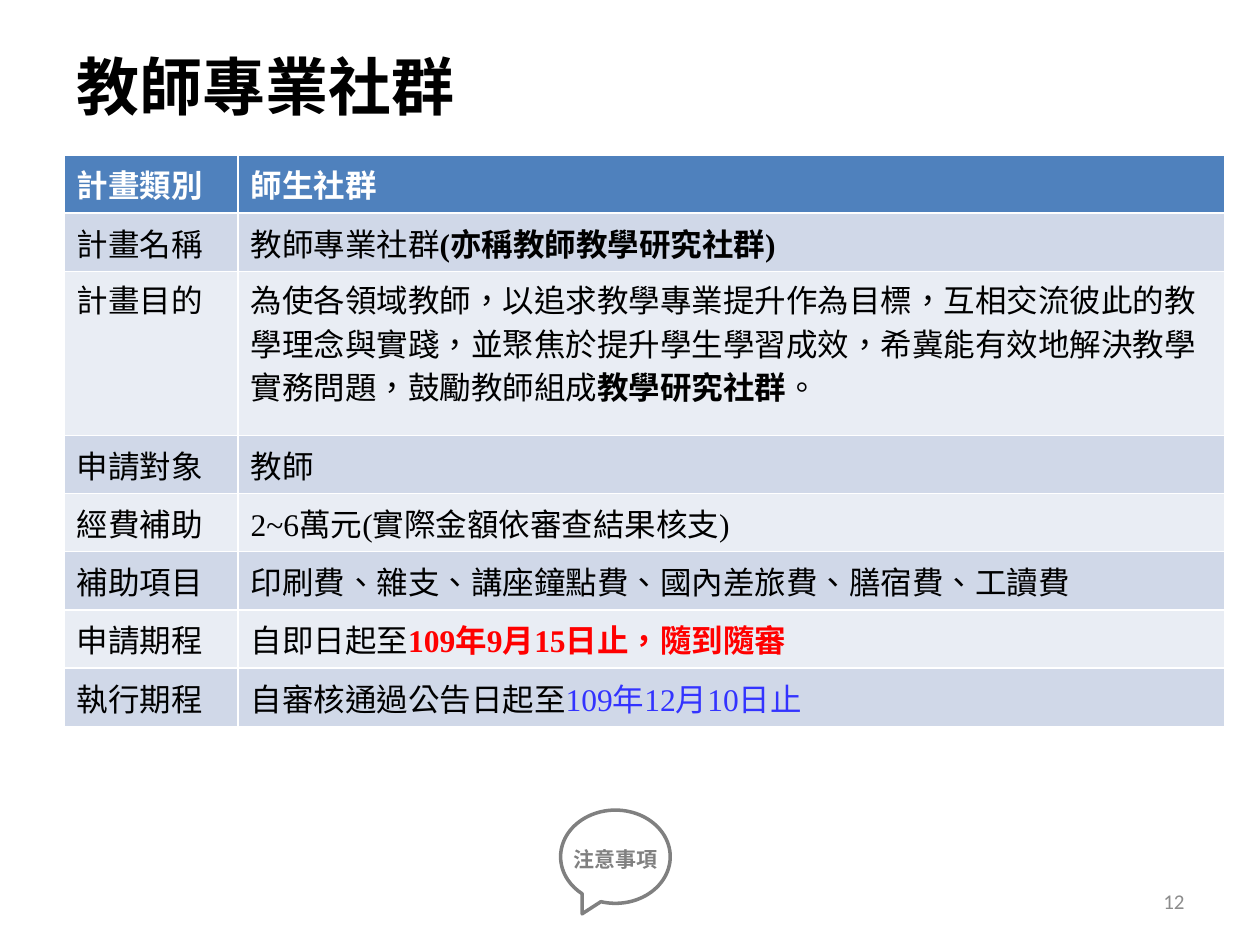
import pptx
import pptx.util
import pptx.dml.color
import pptx.enum.lang
import pptx.enum.shapes
import pptx.enum.text
import lxml.etree

Inches = pptx.util.Inches
Pt = pptx.util.Pt
Anchor = pptx.enum.text.MSO_ANCHOR
Align = pptx.enum.text.PP_ALIGN
SANS = "Noto Sans CJK SC"


def color(text):
    return pptx.dml.color.RGBColor.from_string(text)


def style(para, size, name, tint, bold=False):
    """Set the paragraph font, with the sans face for Chinese characters."""
    font = para.font
    font.size, font.name, font.bold = Pt(size), name, bold
    font.color.rgb = color(tint)
    font.language_id = pptx.enum.lang.MSO_LANGUAGE_ID.TRADITIONAL_CHINESE
    latin = para._p.pPr.find(".//" + pptx.oxml.ns.qn("a:latin"))
    east = lxml.etree.Element(pptx.oxml.ns.qn("a:ea"), typeface=SANS)
    latin.addnext(east)


deck = pptx.Presentation()
deck.slide_width, deck.slide_height = Inches(10), Inches(7.5)
slide = deck.slides.add_slide(deck.slide_layouts[6])
shapes = slide.shapes

# Each row: label, plain text, then marked text, its color and weight, and a tail
rows = [
    ("計畫類別", "師生社群"),
    ("計畫名稱", "教師專業社群", "(亦稱教師教學研究社群)", "000000", True),
    ("計畫目的", "為使各領域教師，以追求教學專業提升作為目標，互相交流彼此的教學理念與實踐，"
     "並聚焦於提升學生學習成效，希冀能有效地解決教學實務問題，鼓勵教師組成",
     "教學研究社群", "000000", True, "。"),
    ("申請對象", "教師"),
    ("經費補助", "2~6萬元(實際金額依審查結果核支)"),
    ("補助項目", "印刷費、雜支、講座鐘點費、國內差旅費、膳宿費、工讀費"),
    ("申請期程", "自即日起至", "109年9月15日止，隨到隨審", "FF0000", True),
    ("執行期程", "自審核通過公告日起至", "109年12月10日止", "3333FF", False),
]
AIM = 2
table = shapes.add_table(len(rows), 2, Inches(0.51), Inches(1.23),
                         Inches(9.21), Inches(4.18)).table
table.columns[0].width = Inches(1.38)
table.columns[1].width = Inches(7.83)

for i, (label, plain, *mark) in enumerate(rows):
    head = i == 0
    table.rows[i].height = Inches(1.3 if i == AIM else 0.41)
    fill = "4F81BD" if head else ("E9EDF4", "D0D8E8")[i % 2]
    for j, text in enumerate((label, plain)):
        cell = table.cell(i, j)
        cell.fill.solid()
        cell.fill.fore_color.rgb = color(fill)
        para = cell.text_frame.paragraphs[0]
        para.add_run().text = text
        if i == AIM:
            para.line_spacing = Pt(25)
        style(para, 18, "Times New Roman", "FFFFFF" if head else "000000", head)
    if mark:
        text, tint, bold, *tail = mark
        run = para.add_run()
        run.text = text
        run.font.bold = bold
        run.font.color.rgb = color(tint)
        for text in tail:
            para.add_run().text = text

bubble = shapes.add_shape(pptx.enum.shapes.MSO_SHAPE.OVAL_CALLOUT,
                          Inches(4.45), Inches(6.43), Inches(0.87), Inches(0.74))
bubble.adjustments[0], bubble.adjustments[1] = -0.304, 0.612
bubble.shadow.inherit = False
bubble.fill.background()
bubble.line.color.rgb = color("808080")
bubble.line.width = Pt(2)

# Text, place, font, wrap, anchor, alignment
boxes = [
    ("教師專業社群", (0.51, 0.29, 6.31, 0.77), (36, SANS, "000000", True),
     True, Anchor.MIDDLE, Align.LEFT),
    ("12", (7.17, 6.95, 2.33, 0.4), (12, "Calibri", "8C8C8C"),
     True, Anchor.MIDDLE, Align.RIGHT),
    ("注意事項", (4.45, 6.67, 0.88, 0.3), (12, SANS, "808080", True),
     False, Anchor.TOP, Align.LEFT),
]
for text, place, font, wrap, anchor, align in boxes:
    frame = shapes.add_textbox(*map(Inches, place)).text_frame
    frame.word_wrap = wrap
    frame.vertical_anchor = anchor
    para = frame.paragraphs[0]
    para.add_run().text = text
    para.alignment = align
    style(para, *font)

deck.save("out.pptx")
